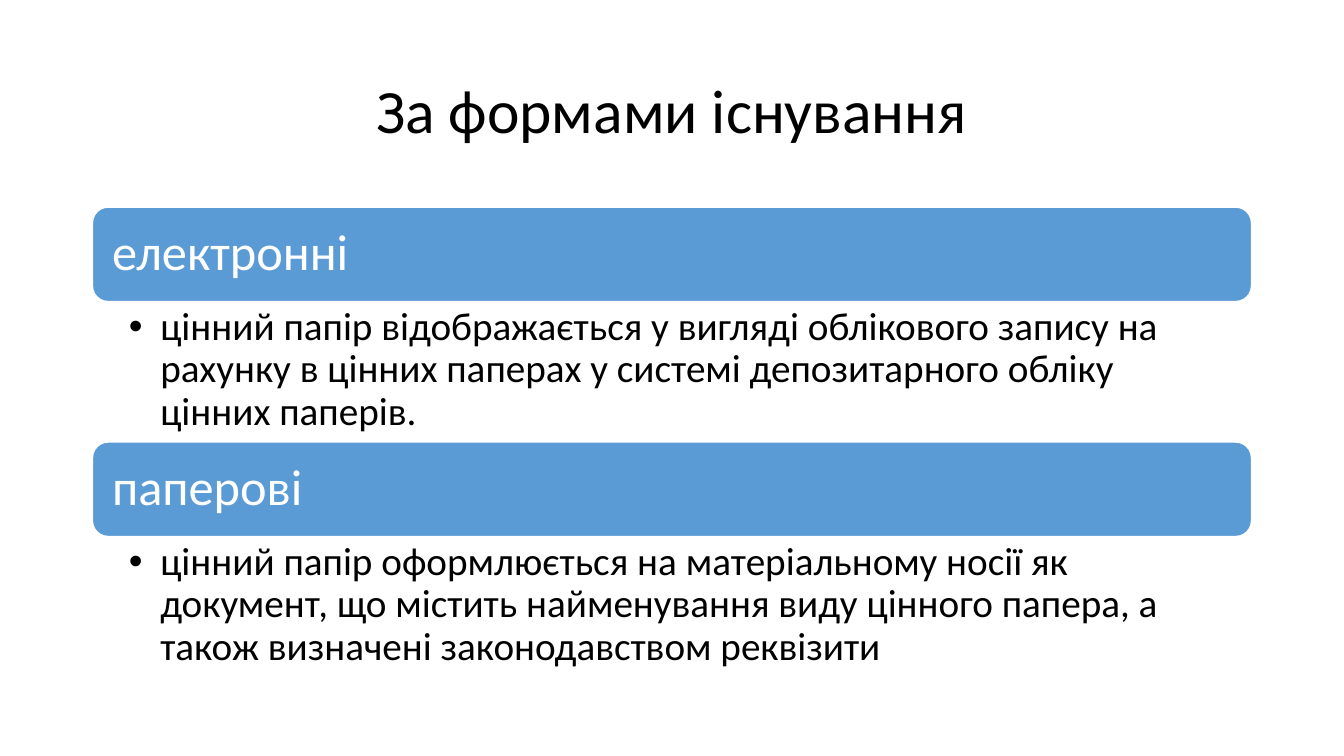
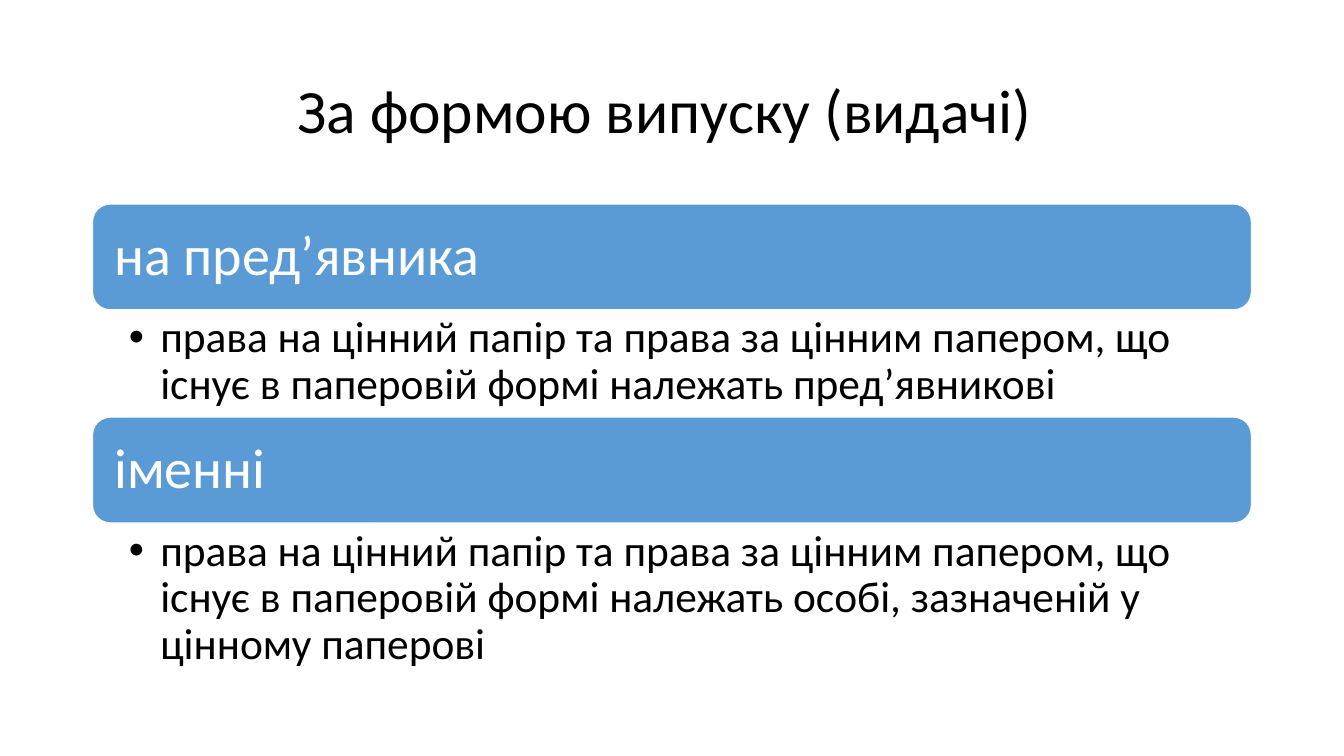
from dataclasses import dataclass

from lxml.etree import SubElement
from pptx import Presentation
from pptx.dml.color import RGBColor
from pptx.enum.shapes import MSO_SHAPE as Shape
from pptx.enum.text import MSO_ANCHOR as Anchor, MSO_AUTO_SIZE as AutoSize, PP_ALIGN as Align
from pptx.oxml.ns import qn
from pptx.util import Cm, Pt

# Shared look
FONT = "Calibri"
BLACK, WHITE, BLUE = "000000", "FFFFFF", "5B9BD5"
LEFT, WIDTH = 2.33, 29.21
TITLE_TOP, TITLE_HEIGHT, TITLE_SIZE = 1.01, 3.68, 44
BULLET_INDENT = 0.79
LINE_SPACING = 0.9


@dataclass
class Section:
    heading: str
    detail: str
    detail_height: float


@dataclass
class ListSlide:
    title: str
    top: float
    band_height: float
    band_inset: float
    heading_size: float
    detail_size: float
    detail_inset: float
    detail_right: float
    sections: list[Section]


SLIDES = [
    ListSlide(
        "За формами існування", 5.22, 2.38, 0.38, 36, 28, 0.13, 0.71,
        [
            Section("електронні",
                    "цінний папір відображається у вигляді облікового запису на рахунку "
                    "в цінних паперах у системі депозитарного обліку цінних паперів.", 3.54),
            Section("паперові",
                    "цінний папір оформлюється на матеріальному носії як документ, що містить "
                    "найменування виду цінного папера, а також визначені законодавством реквізити",
                    3.54),
        ],
    ),
    ListSlide(
        "За формою випуску (видачі) ", 5.14, 2.67, 0.42, 40, 31, 0.14, 0.79,
        [
            Section("на пред’явника",
                    "права на цінний папір та права за цінним папером, що існує в паперовій "
                    "формі належать пред’явникові", 2.7),
            Section("іменні",
                    "права на цінний папір та права за цінним папером, що існує в паперовій "
                    "формі належать особі, зазначеній у цінному паперові", 3.91),
        ],
    ),
]


def rgb(value: str) -> RGBColor:
    return RGBColor.from_string(value)


def set_insets(frame, left: float, top: float, right: float, bottom: float) -> None:
    frame.margin_left, frame.margin_top = Cm(left), Cm(top)
    frame.margin_right, frame.margin_bottom = Cm(right), Cm(bottom)


def write(frame, text: str, size: float, color: str, align=Align.LEFT,
          space_after: float = 0, bullet: bool = False) -> None:
    """Fill a text frame with one formatted paragraph."""
    frame.word_wrap = True
    frame.auto_size = AutoSize.NONE
    para = frame.paragraphs[0]
    para.text = text
    para.alignment = align
    para.line_spacing = LINE_SPACING
    para.space_before = Pt(0)
    para.space_after = Pt(space_after)
    if bullet:
        add_bullet(para, color)
    para.font.name = FONT
    para.font.size = Pt(size)
    para.font.color.rgb = rgb(color)


def add_bullet(para, color: str) -> None:
    para.level = 1
    properties = para._p.get_or_add_pPr()
    properties.set("marL", str(Cm(BULLET_INDENT)))
    properties.set("indent", str(-Cm(BULLET_INDENT)))
    bullet_color = SubElement(properties, qn("a:buClr"))
    SubElement(bullet_color, qn("a:srgbClr"), val=color)
    SubElement(properties, qn("a:buFont"), typeface="Arial")
    SubElement(properties, qn("a:buChar"), char="•")


def add_title(page, text: str) -> None:
    title = page.shapes.title
    title.left, title.top = Cm(LEFT), Cm(TITLE_TOP)
    title.width, title.height = Cm(WIDTH), Cm(TITLE_HEIGHT)
    title.text_frame.vertical_anchor = Anchor.MIDDLE
    write(title.text_frame, text, TITLE_SIZE, BLACK, Align.CENTER)


def add_band(page, top: float, text: str, style: ListSlide) -> None:
    band = page.shapes.add_shape(Shape.ROUNDED_RECTANGLE, Cm(LEFT), Cm(top),
                                 Cm(WIDTH), Cm(style.band_height))
    band.shadow.inherit = False
    band.fill.solid()
    band.fill.fore_color.rgb = rgb(BLUE)
    band.line.color.rgb = rgb(WHITE)
    band.line.width = Pt(1)
    frame = band.text_frame
    frame.vertical_anchor = Anchor.MIDDLE
    set_insets(frame, *[style.band_inset] * 4)
    write(frame, text, style.heading_size, WHITE, space_after=0.35 * style.heading_size)


def add_detail(page, top: float, section: Section, style: ListSlide) -> None:
    box = page.shapes.add_textbox(Cm(LEFT), Cm(top), Cm(WIDTH), Cm(section.detail_height))
    frame = box.text_frame
    set_insets(frame, 0.92, style.detail_inset, style.detail_right, style.detail_inset)
    write(frame, section.detail, style.detail_size, BLACK,
          space_after=0.2 * style.detail_size, bullet=True)


def build_slide(deck, content: ListSlide) -> None:
    page = deck.slides.add_slide(deck.slide_layouts[5])
    add_title(page, content.title)
    # Bands and details stack without gaps
    top = content.top
    for section in content.sections:
        add_band(page, top, section.heading, content)
        top += content.band_height
        add_detail(page, top, section, content)
        top += section.detail_height


def main() -> None:
    deck = Presentation()
    deck.slide_width, deck.slide_height = Cm(33.87), Cm(19.05)
    for content in SLIDES:
        build_slide(deck, content)
    deck.save("out.pptx")


if __name__ == "__main__":
    main()
